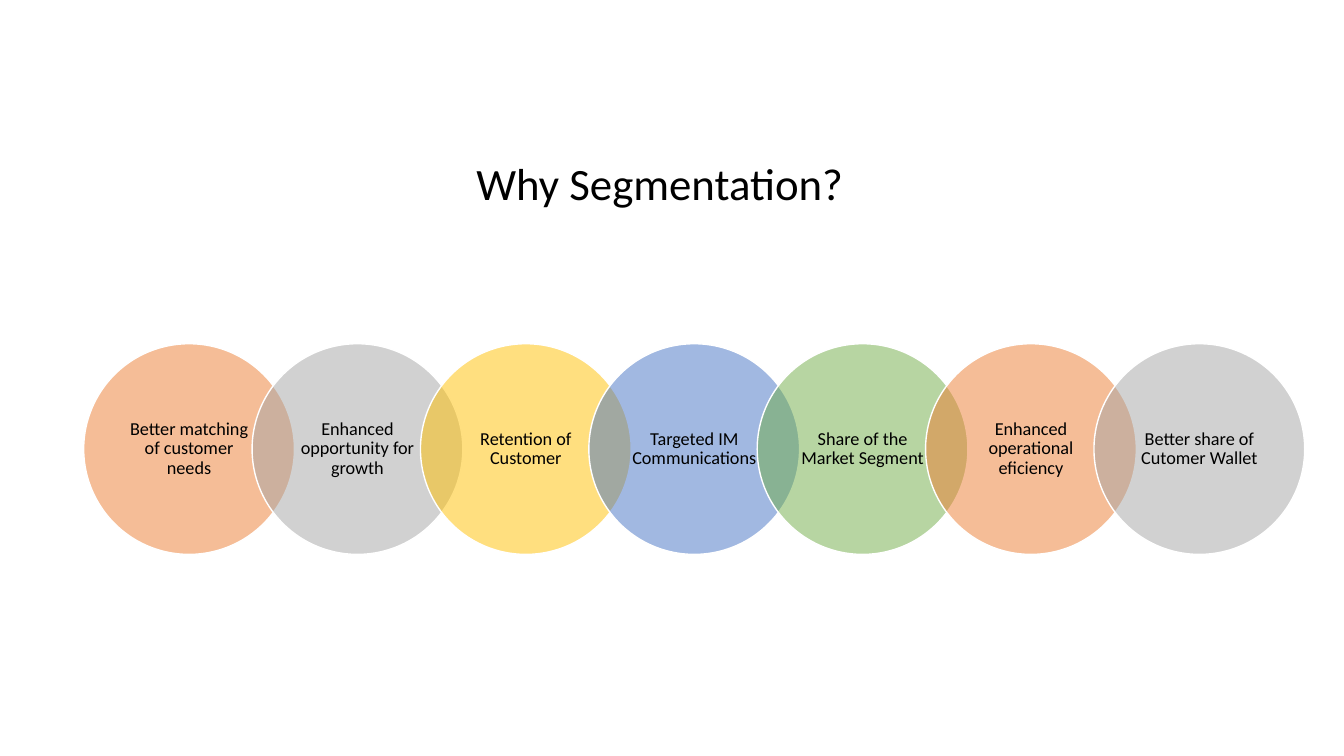
import pptx
import pptx.util
import pptx.dml.color
import pptx.enum.shapes
import pptx.enum.text
import pptx.oxml
import pptx.oxml.ns

Inches = pptx.util.Inches
ANCHOR = pptx.enum.text.MSO_ANCHOR
FONT = "Calibri"
SIZE, STEP = 2.09, 1.67
LEFT, TOP = 0.83, 3.41
REASONS = [
    ("Better matching of customer needs", "ED7D31"),
    ("Enhanced opportunity for growth", "A5A5A5"),
    ("Retention of Customer", "FFC000"),
    ("Targeted IM Communications", "4472C4"),
    ("Share of the Market Segment", "70AD47"),
    ("Enhanced operational eficiency", "ED7D31"),
    ("Better share of Cutomer Wallet", "A5A5A5"),
]


def paint(target, color):
    """Give a fill or a font colour a solid hex colour."""
    rgb = pptx.dml.color.RGBColor.from_string(color)
    if hasattr(target, "solid"):
        target.solid()
        target.fore_color.rgb = rgb
    else:
        target.rgb = rgb


def write(shape, text, size, color="000000", anchor=ANCHOR.MIDDLE,
          space=1.0, inset=(0.1, 0.05)):
    """Put one centred paragraph of text into a shape."""
    frame = shape.text_frame
    frame.word_wrap = True
    frame.auto_size = pptx.enum.text.MSO_AUTO_SIZE.NONE
    frame.vertical_anchor = anchor
    frame.margin_left = frame.margin_right = Inches(inset[0])
    frame.margin_top = frame.margin_bottom = Inches(inset[1])
    para = frame.paragraphs[0]
    para.alignment = pptx.enum.text.PP_ALIGN.CENTER
    para.line_spacing = space
    run = para.add_run()
    run.text = text
    run.font.name = FONT
    run.font.size = pptx.util.Pt(size)
    paint(run.font.color, color)


def fade(shape, percent):
    """Set the opacity of a solid fill."""
    tone = shape.fill._xPr.find(".//" + pptx.oxml.ns.qn("a:srgbClr"))
    space = pptx.oxml.ns.nsdecls("a")
    tone.append(pptx.oxml.parse_xml(
        f'<a:alpha {space} val="{percent * 1000}"/>'))


def add_title(slide, text):
    """Place the slide title."""
    title = slide.shapes.title
    title.left, title.top = Inches(3.63), Inches(1.49)
    title.width, title.height = Inches(5.83), Inches(0.64)
    write(title, text, 32, anchor=ANCHOR.TOP)


def add_disc(group, left, text, color):
    """Add one translucent circle with its label."""
    disc = group.shapes.add_shape(
        pptx.enum.shapes.MSO_SHAPE.OVAL,
        Inches(left), Inches(TOP), Inches(SIZE), Inches(SIZE))
    disc.shadow.inherit = False
    paint(disc.fill, color)
    fade(disc, 50)
    paint(disc.line.fill, "FFFFFF")
    disc.line.width = pptx.util.Pt(1)
    write(disc, text, 13, space=0.9, inset=(0.1, 0.02))


def main():
    """Build and save the slide."""
    deck = pptx.Presentation()
    deck.slide_width, deck.slide_height = Inches(13.33), Inches(7.5)
    slide = deck.slides.add_slide(deck.slide_layouts.get_by_name("Title Only"))
    add_title(slide, "Why Segmentation?")
    chain = slide.shapes.add_group_shape()
    for index, (text, color) in enumerate(REASONS):
        add_disc(chain, LEFT + index * STEP, text, color)
    deck.save("out.pptx")


if __name__ == "__main__":
    main()
